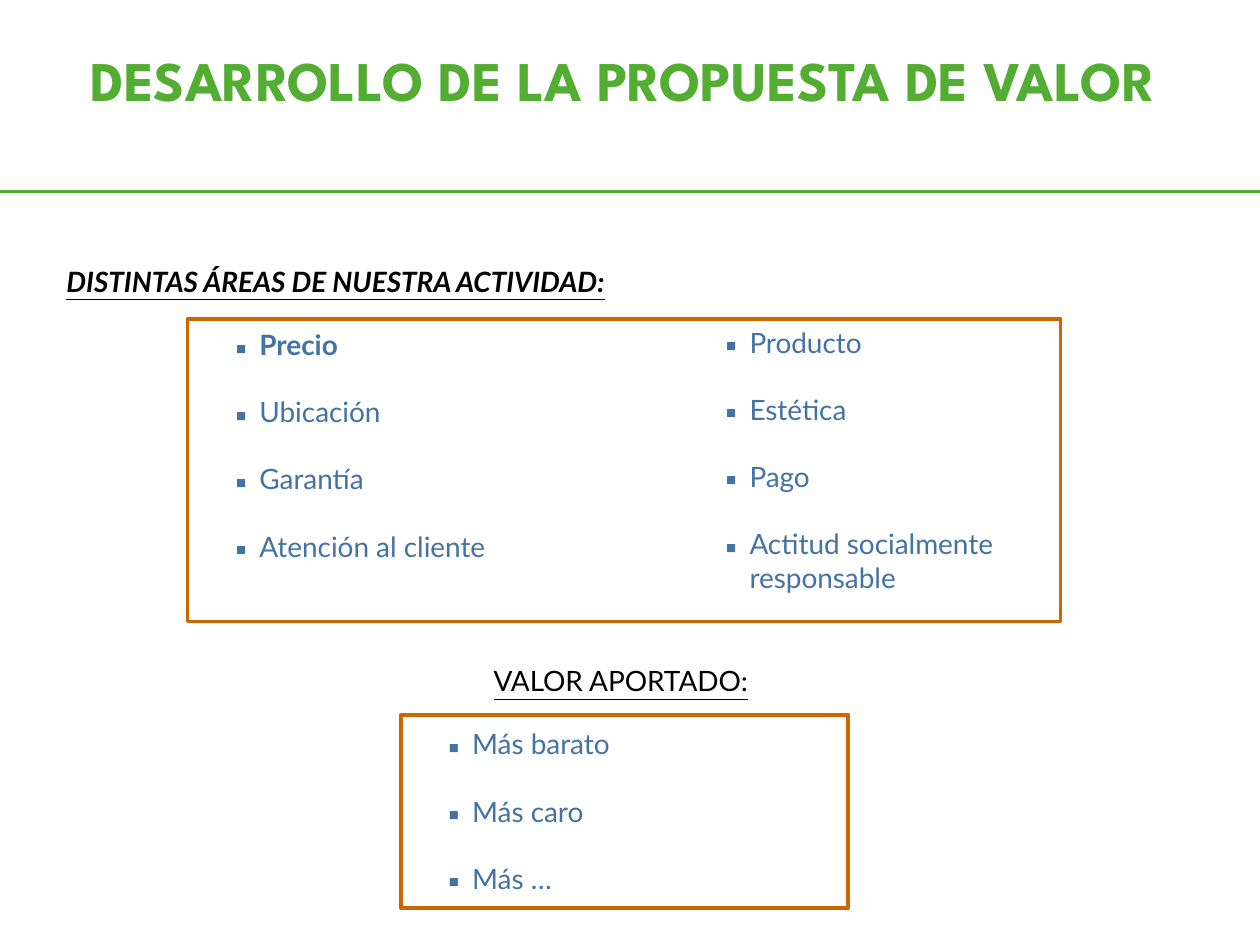
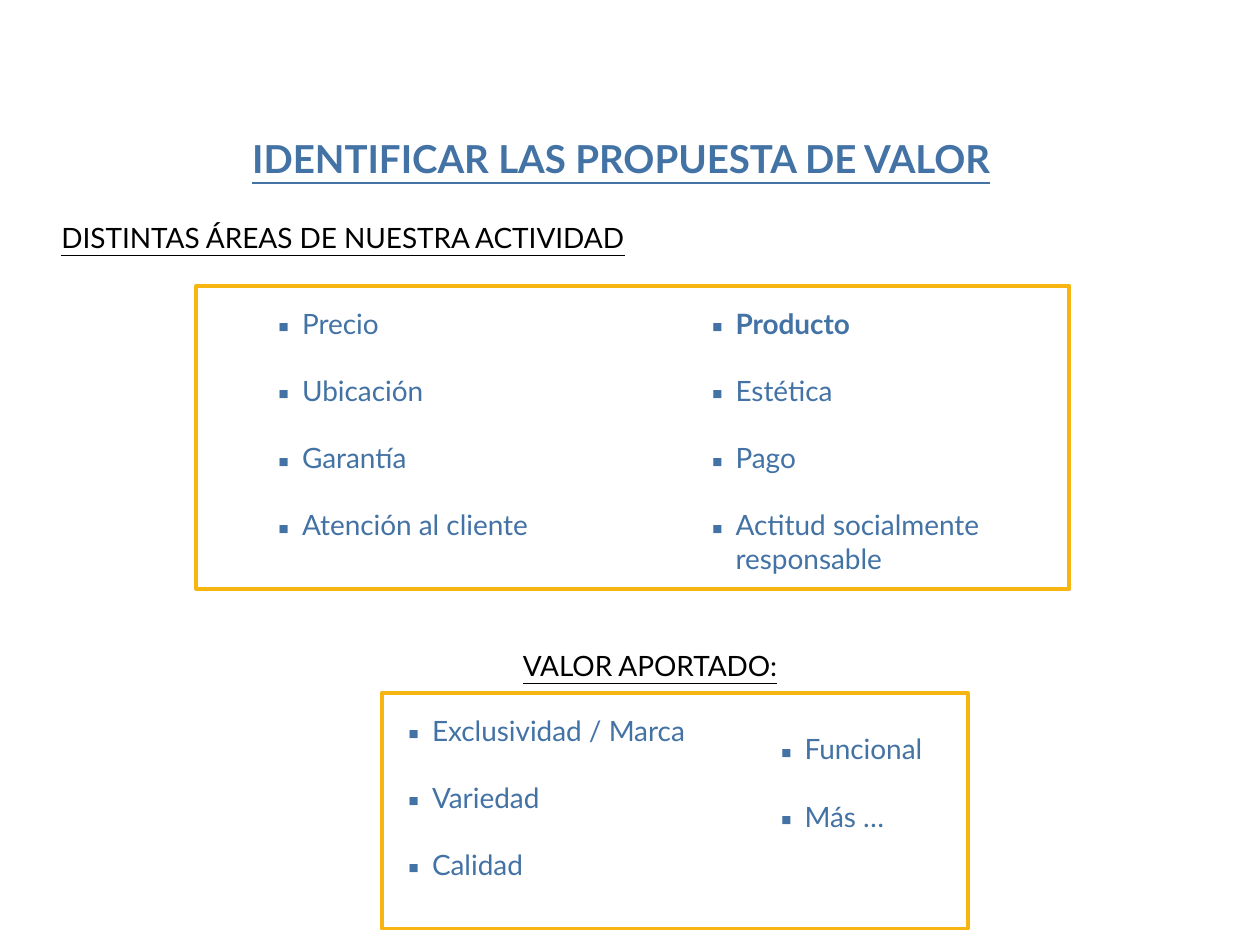
from lxml.etree import SubElement as Sub
from pptx import Presentation as Deck
from pptx.dml.color import RGBColor as Rgb
from pptx.enum.shapes import MSO_CONNECTOR as Conn, MSO_SHAPE as Kind
from pptx.enum.text import PP_ALIGN as Align
from pptx.oxml.ns import qn
from pptx.util import Cm, Pt

HUES = {"green": "53AD32", "blue": "4372A5", "black": "000000",
        "rust": "CC6600", "gold": "F7B512"}
SIZE = 16
GAP = 19.2
DENT = Cm(0.48)


def write(page, spot, lines, hue="black", size=SIZE, font="Lato",
          bold=(), slant=False, under=False, mid=False, dots=False):
    frame = page.shapes.add_textbox(*map(Cm, spot)).text_frame
    frame.word_wrap = True
    for num, line in enumerate(lines):
        para = frame.add_paragraph() if num else frame.paragraphs[0]
        para.alignment = Align.CENTER if mid else Align.LEFT
        if dots:
            para.space_after = Pt(GAP)
            props = para._p.get_or_add_pPr()
            props.set("marL", str(DENT))
            props.set("indent", str(-DENT))
            tint = Sub(props, qn("a:buClr"))
            Sub(tint, qn("a:srgbClr"), val=HUES[hue])
            Sub(props, qn("a:buFont"), typeface="Noto Sans Symbols")
            Sub(props, qn("a:buChar"), char="▪")
        run = para.add_run()
        run.text = line
        face = run.font
        face.name, face.size = font, Pt(size)
        face.bold, face.italic, face.underline = line in bold, slant, under
        face.color.rgb = Rgb.from_string(HUES[hue])


def box(page, spot, hue):
    rect = page.shapes.add_shape(Kind.RECTANGLE, *map(Cm, spot))
    rect.shadow.inherit = False
    rect.fill.background()
    rect.line.color.rgb = Rgb.from_string(HUES[hue])
    rect.line.width = Pt(2.25)


deck = Deck()
deck.slide_width, deck.slide_height = Cm(25.4), Cm(19.05)
blank = deck.slide_layouts[6]
first, second = [deck.slides.add_slide(blank) for _ in range(2)]

left = ["Precio", "Ubicación", "Garantía", "Atención al cliente"]
right = ["Producto", "Estética", "Pago", "Actitud socialmente responsable"]
areas = "DISTINTAS ÁREAS DE NUESTRA ACTIVIDAD"
value = "VALOR APORTADO:"

title = "DESARROLLO DE LA PROPUESTA DE VALOR"
write(first, (1.37, 0.79, 22.4, 3), [title], "green", 32,
      "League Spartan", bold=[title], mid=True)
rule = first.shapes.add_connector(Conn.STRAIGHT, Cm(-0.08), Cm(3.86), Cm(25.4), Cm(3.86))
rule.line.color.rgb = Rgb.from_string(HUES["green"])
rule.line.width = Pt(2.25)
Sub(rule._element.spPr, qn("a:effectLst"))
head = areas + ":"
write(first, (1.09, 5.2, 13.64, 1), [head], bold=[head], slant=True, under=True)

title = "IDENTIFICAR LAS PROPUESTA DE VALOR"
write(second, (1.02, 2.59, 23.01, 1.6), [title], "blue", 22,
      bold=[title], under=True, mid=True)
write(second, (0.99, 4.32, 14.05, 1), [areas], under=True)

for page, spot in [(first, (9.7, 13.26, 7.65, 1)), (second, (10.29, 12.94, 9.65, 1))]:
    write(page, spot, [value], under=True)

for page, hue, spots in [
    (first, "rust", [(3.78, 6.43, 17.6, 6.1), (8.08, 14.42, 9.02, 3.89)]),
    (second, "gold", [(3.96, 5.77, 17.6, 6.1), (7.7, 13.97, 11.81, 4.75)]),
]:
    for spot in spots:
        box(page, spot, hue)

for page, spot, lines, bold in [
    (first, (4.5, 6.48, 9.5, 6.1), left, left[:1]),
    (first, (14.38, 6.43, 7.19, 6.1), right, []),
    (first, (8.79, 14.53, 10.39, 4.4), ["Más barato", "Más caro", "Más …"], []),
    (second, (5.36, 6.05, 7.34, 6.1), left, []),
    (second, (14.1, 6.05, 8.61, 6.1), right, right[:1]),
    (second, (7.98, 14.25, 8.2, 4.4), ["Exclusividad / Marca", "Variedad", "Calidad"], []),
    (second, (15.49, 14.63, 6.78, 3.18), ["Funcional", "Más …"], []),
]:
    write(page, spot, lines, "blue", bold=bold, dots=True)

deck.save("out.pptx")
